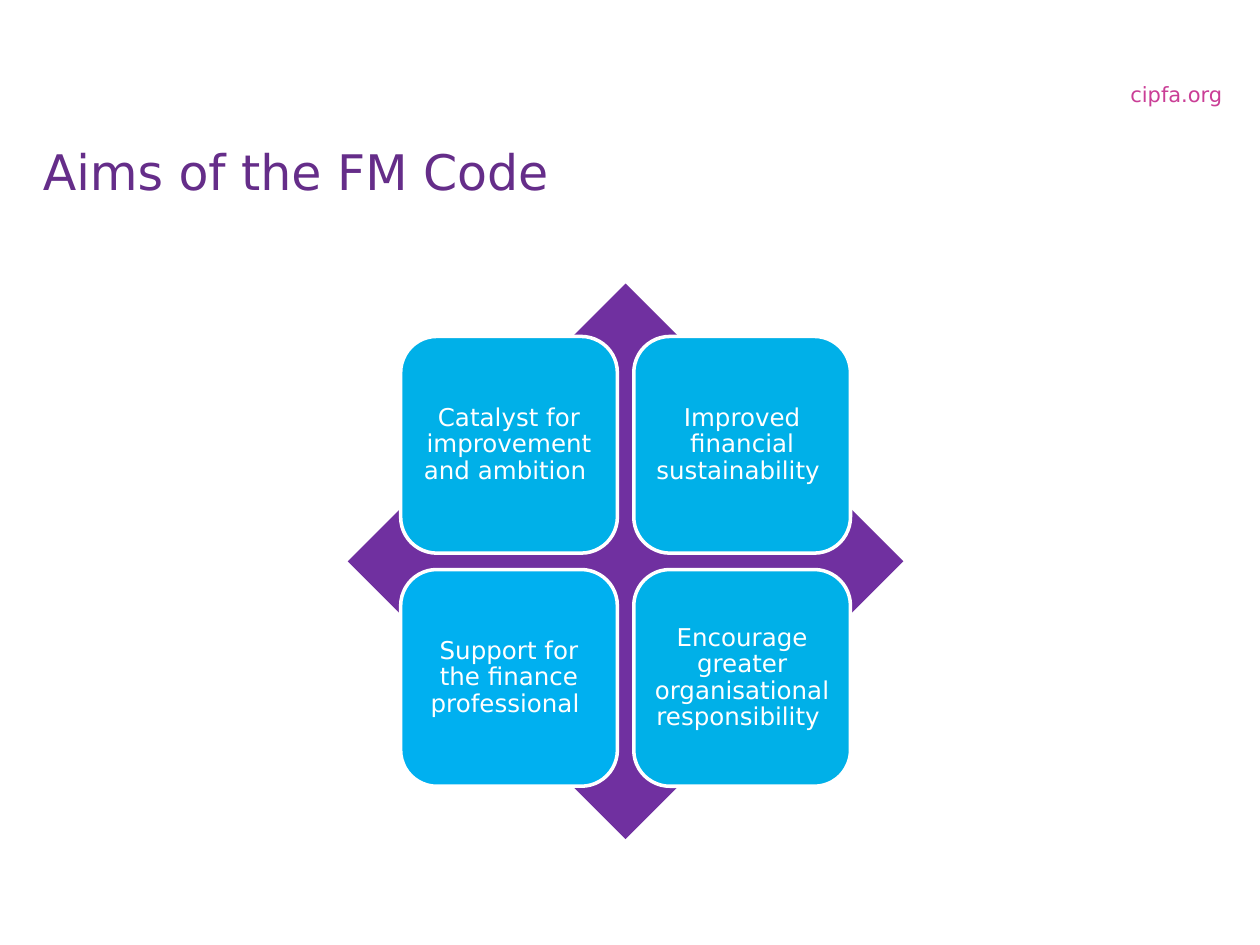
from pptx import Presentation, util as u
from pptx.dml.color import RGBColor
from pptx.enum import shapes, text

FONT = "DejaVu Sans"
WHITE, PURPLE, TILE, TILE_ALT = "FFFFFF", "7030A0", "00B0E8", "00B0F0"
TILE_LEFT, TILE_TOP, TILE_SIZE, TILE_STEP = 3.18, 2.67, 1.72, 1.85
AIMS = [
    ("Catalyst for improvement and ambition ", TILE),
    ("Improved financial sustainability ", TILE),
    ("Support for the finance professional ", TILE_ALT),
    ("Encourage greater organisational responsibility ", TILE),
]


def rgb(value):
    return RGBColor.from_string(value)


def box(*lengths):
    return [u.Inches(n) for n in lengths]


def set_text(sp, content, size, color, align, frame=None, para=None):
    """Write one formatted paragraph into a shape."""
    tf = sp.text_frame
    tf.word_wrap = True
    for name, value in (frame or {}).items():
        setattr(tf, name, value)
    p = tf.paragraphs[0]
    p.alignment = align
    for name, value in (para or {}).items():
        setattr(p, name, value)
    r = p.add_run()
    r.text = content
    for name, value in {"name": FONT, "size": u.Pt(size)}.items():
        setattr(r.font, name, value)
    r.font.color.rgb = rgb(color)


def add_title(s, content):
    sp = s.shapes.title
    sp.left, sp.top, sp.width, sp.height = box(0.24, 1.07, 9.41, 0.94)
    set_text(sp, content, 28, "652D89", text.PP_ALIGN.LEFT,
             {"vertical_anchor": text.MSO_ANCHOR.TOP,
              "auto_size": text.MSO_AUTO_SIZE.NONE})


def add_web_address(s, content):
    sp = s.shapes.add_textbox(*box(6.65, 0.6, 3.15, 0.3))
    set_text(sp, content, 12, "CA3E96", text.PP_ALIGN.RIGHT)


def add_filled(parent, kind, bounds, fill, line=None):
    sp = parent.shapes.add_shape(kind, *box(*bounds))
    sp.shadow.inherit = False
    sp.fill.solid()
    sp.fill.fore_color.rgb = rgb(fill)
    if line:
        sp.line.color.rgb = rgb(line)
        sp.line.width = u.Pt(2)
    else:
        sp.line.fill.background()
    return sp


def add_tile(parent, index, content, fill):
    row, col = divmod(index, 2)
    bounds = (TILE_LEFT + col * TILE_STEP, TILE_TOP + row * TILE_STEP,
              TILE_SIZE, TILE_SIZE)
    sp = add_filled(parent, shapes.MSO_SHAPE.ROUNDED_RECTANGLE, bounds, fill, WHITE)
    frame = {f"margin_{side}": u.Inches(0.06)
             for side in ("left", "top", "right", "bottom")}
    frame["vertical_anchor"] = text.MSO_ANCHOR.MIDDLE
    set_text(sp, content, 14, WHITE, text.PP_ALIGN.CENTER, frame,
             {"line_spacing": 0.9})


def main():
    prs = Presentation()
    prs.slide_width, prs.slide_height = box(10, 7.5)
    s = prs.slides.add_slide(prs.slide_layouts[5])

    # Header
    add_web_address(s, "cipfa.org")
    add_title(s, "Aims of the FM Code")

    # Matrix of aims on a diamond
    matrix = s.shapes.add_group_shape()
    add_filled(matrix, shapes.MSO_SHAPE.DIAMOND, (2.76, 2.25, 4.41, 4.41), PURPLE)
    for index, (content, fill) in enumerate(AIMS):
        add_tile(matrix, index, content, fill)

    prs.save("out.pptx")


if __name__ == "__main__":
    main()
